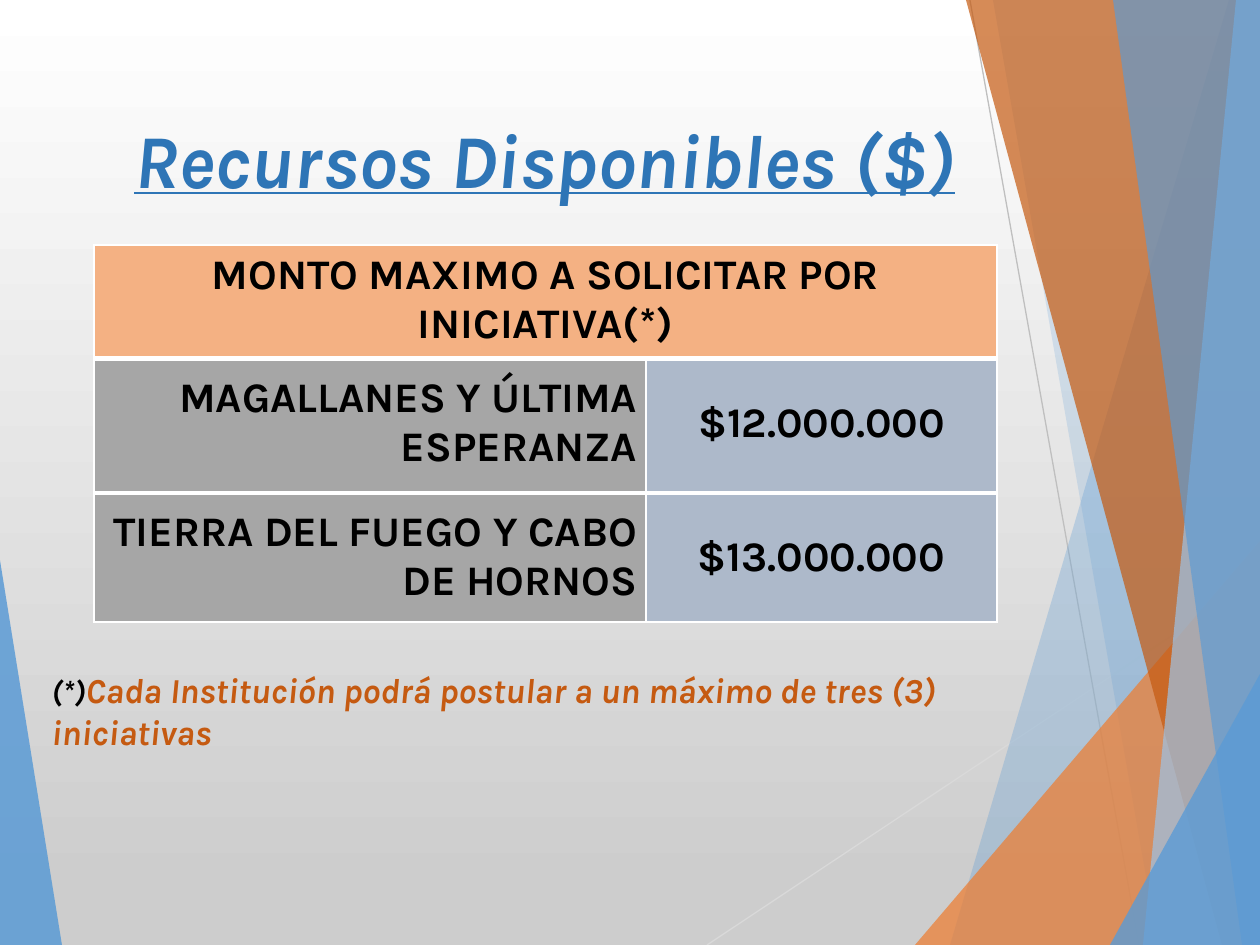
from lxml import etree
from pptx import Presentation
from pptx import util as u
from pptx.dml.color import RGBColor
from pptx.enum import shapes, text
from pptx.oxml import ns

PX = 914400 / 126
WIDTH, HEIGHT = 1260, 945
FONT = "Karla"
COLORS = {
    "white": "FFFFFF", "backdrop": "CDCDCD", "black": "000000",
    "blue": "5B9BD5", "pale_blue": "9DC3E6", "title_blue": "2E75B6",
    "orange": "ED7D31", "rust": "C55A11", "peach": "F4B183",
    "gray": "A6A6A6", "slate": "ADB9CA",
    "line_light": "D9D9D9", "line_gray": "BFBFBF",
}
LEFT, CENTER, RIGHT = text.PP_ALIGN.LEFT, text.PP_ALIGN.CENTER, text.PP_ALIGN.RIGHT


def px(*lengths):
    return [u.Emu(round(length * PX)) for length in lengths]


def rgb(name):
    return RGBColor.from_string(COLORS[name])


def add_xml(parent, tag, **attributes):
    return etree.SubElement(parent, ns.qn(tag), attributes)


def write(paragraph, words, size, color="black", align=LEFT,
          italic=False, underline=False):
    paragraph.alignment = align
    run = paragraph.add_run()
    run.text = words
    font = run.font
    font.name, font.size, font.bold = FONT, u.Pt(size), True
    font.italic, font.underline = italic, underline
    font.color.rgb = rgb(color)


class SlideBuilder:
    def __init__(self, deck):
        self.slide = deck.slides.add_slide(deck.slide_layouts[6])
        self.shapes = self.slide.shapes

    def background(self, top, bottom):
        fill = self.slide.background.fill
        fill.gradient()
        fill.gradient_angle = 270
        for stop, color, position in zip(fill.gradient_stops, (top, bottom), (0, 0.94)):
            stop.color.rgb = rgb(color)
            stop.position = position

    def facet(self, points, color, opacity):
        builder = self.shapes.build_freeform(*points[0], scale=PX)
        builder.add_line_segments(points[1:], close=True)
        facet = builder.convert_to_shape()
        facet.shadow.inherit = False
        facet.line.fill.background()
        facet.fill.solid()
        facet.fill.fore_color.rgb = rgb(color)
        tint = facet.fill._xPr.find(".//" + ns.qn("a:srgbClr"))
        add_xml(tint, "a:alpha", val=str(opacity * 1000))

    def line(self, start, end, color):
        line = self.shapes.add_connector(
            shapes.MSO_CONNECTOR.STRAIGHT, *px(*start, *end))
        line.line.color.rgb = rgb(color)
        line.line.width = u.Pt(0.75)
        add_xml(line._element.spPr, "a:effectLst")

    def text_box(self, box, anchor=text.MSO_ANCHOR.TOP):
        frame = self.shapes.add_textbox(*px(*box)).text_frame
        frame.word_wrap = True
        frame.vertical_anchor = anchor
        return frame

    def table(self, left, top, columns, rows):
        table = self.shapes.add_table(
            len(rows), len(columns),
            *px(left, top, sum(columns), sum(rows))).table
        table.first_row = table.horz_banding = False
        for column, width in zip(table.columns, px(*columns)):
            column.width = width
        for row, height in zip(table.rows, px(*rows)):
            row.height = height
        return table

    def cell(self, cell, words, fill, align, borders,
             anchor=text.MSO_ANCHOR.MIDDLE):
        write(cell.text_frame.paragraphs[0], words, 24, align=align)
        cell.vertical_anchor = anchor
        properties = cell._tc.get_or_add_tcPr()
        for side, points in borders.items():
            edge = add_xml(properties, "a:ln" + side, w=str(u.Pt(points)))
            paint = add_xml(edge, "a:solidFill")
            add_xml(paint, "a:srgbClr", val=COLORS["white"])
        cell.fill.solid()
        cell.fill.fore_color.rgb = rgb(fill)


def main():
    deck = Presentation()
    deck.slide_width, deck.slide_height = px(WIDTH, HEIGHT)
    page = SlideBuilder(deck)
    page.background("white", "backdrop")

    # Decorative facets and thin lines
    page.facet([(0, 560), (62, HEIGHT), (0, HEIGHT)], "blue", 85)
    page.line((707, HEIGHT), (WIDTH, 577), "line_light")
    page.line((970, 0), (1139, HEIGHT), "line_gray")
    right_edge = [(WIDTH, HEIGHT), (WIDTH, 0)]
    for top, bottom, color, opacity in [
        ((1229, 0), 950, "blue", 30),
        ((993, 0), 1158, "blue", 20),
        ((WIDTH, 541), 915, "orange", 72),
        ((966, 0), 1222, "rust", 70),
        ((1236, 0), 1143, "pale_blue", 70),
        ((1113, 0), 1242, "blue", 65),
        ((WIDTH, 674), 1110, "blue", 80),
    ]:
        edge = right_edge if top[1] == 0 else right_edge[:1]
        page.facet([top, (bottom, HEIGHT), *edge], color, opacity)

    # Title
    title = page.text_box((39, 86, 1012, 115), text.MSO_ANCHOR.BOTTOM)
    title.margin_bottom = 0
    heading = title.paragraphs[0]
    heading.line_spacing = 0.7
    write(heading, "Recursos Disponibles ($)", 43.4, "title_blue", CENTER,
          italic=True, underline=True)

    # Maximum amount by province
    amounts = page.table(94, 354, (552, 351), (139, 129))
    for row, (province, amount, bottom) in enumerate([
        ("MAGALLANES Y ÚLTIMA ESPERANZA", "$12.000.000", 3),
        ("TIERRA DEL FUEGO Y CABO DE HORNOS", "$13.000.000", 1),
    ]):
        borders = {"L": 1, "R": 1, "B": bottom}
        name_cell = amounts.cell(row, 0)
        name_cell.margin_left = name_cell.margin_right = u.Inches(0.07)
        name_cell.margin_top = name_cell.margin_bottom = 0
        page.cell(name_cell, province, "gray", RIGHT, borders)
        page.cell(amounts.cell(row, 1), amount, "slate", CENTER, borders)

    # Table heading
    header = page.table(94, 245, (903,), (110,))
    page.cell(header.cell(0, 0), "MONTO MAXIMO A SOLICITAR POR INICIATIVA(*)",
              "peach", CENTER, {"L": 1, "R": 1, "T": 1, "B": 3},
              text.MSO_ANCHOR.TOP)

    # Footnote
    footnote = page.text_box((39, 662, 1062, 97)).paragraphs[0]
    write(footnote, "(*)", 18, italic=True)
    write(footnote, "Cada Institución podrá postular a un máximo de tres (3) iniciativas",
          20, "rust", italic=True)

    deck.save("out.pptx")


if __name__ == "__main__":
    main()
